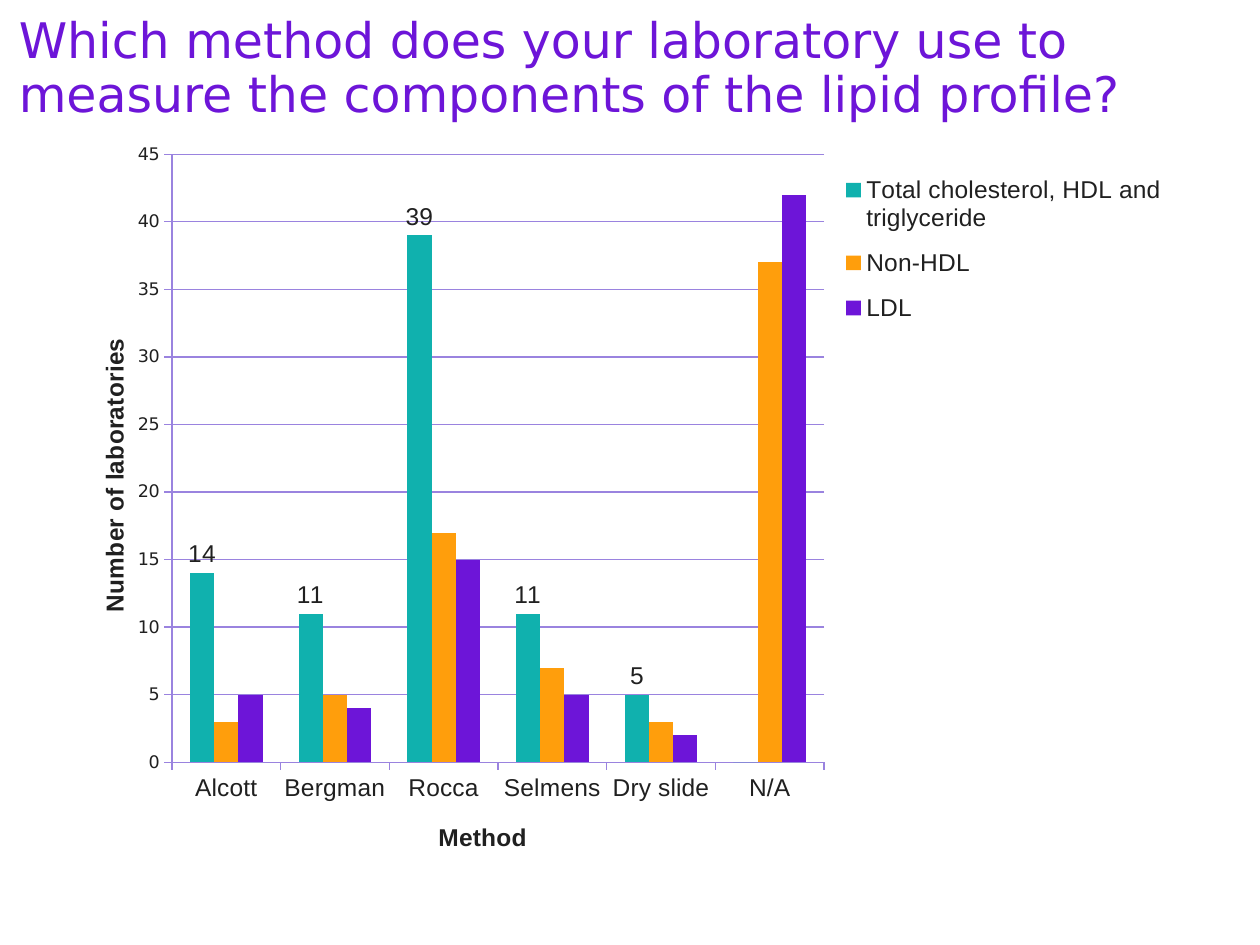
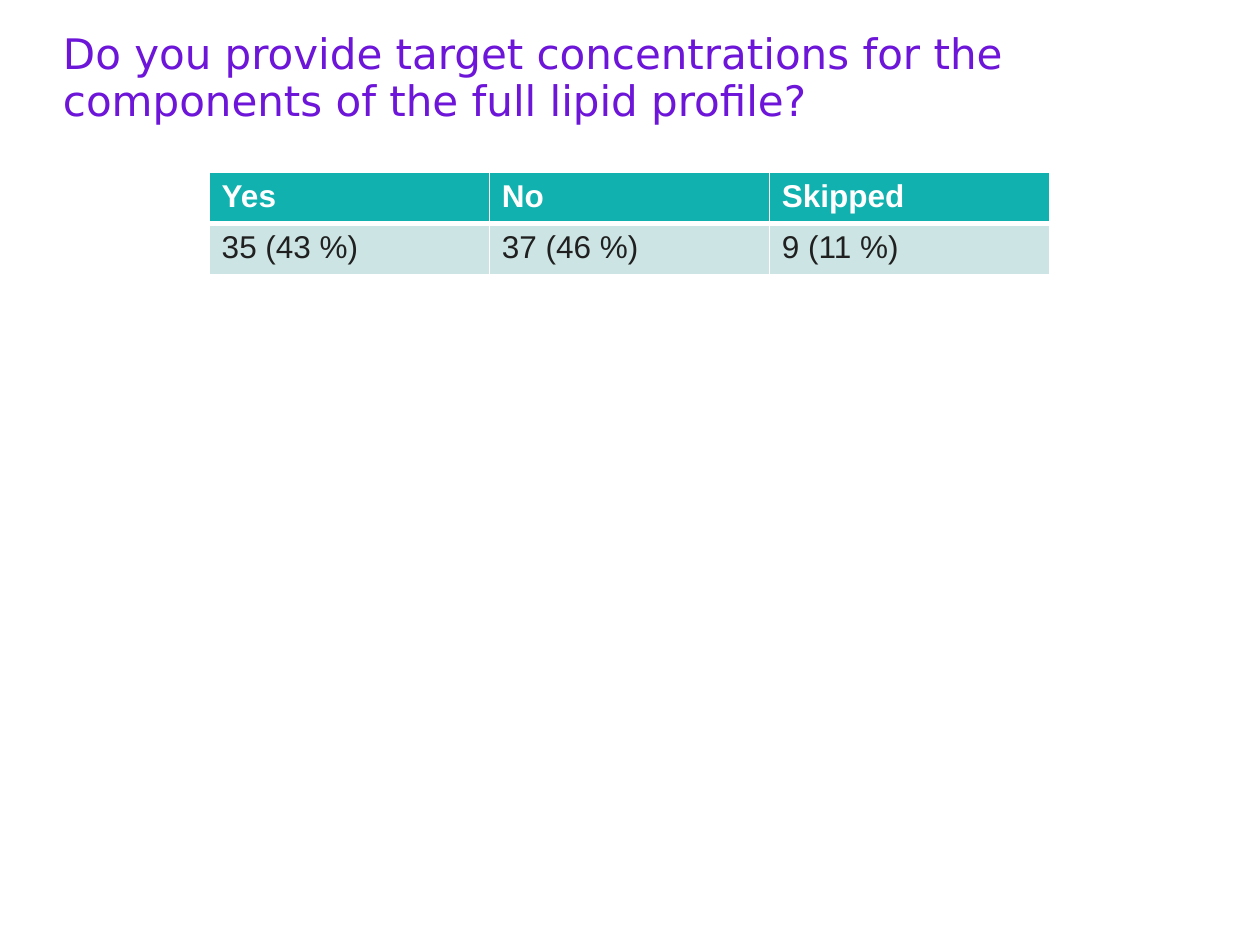
from dataclasses import dataclass
from typing import Any, NamedTuple, Optional

from lxml.etree import SubElement
from pptx import Presentation
from pptx.chart.data import CategoryChartData
from pptx.dml.color import RGBColor
from pptx.enum.chart import XL_CHART_TYPE as ChartType
from pptx.enum.chart import XL_LABEL_POSITION as LabelPosition
from pptx.enum.chart import XL_LEGEND_POSITION as LegendPosition
from pptx.enum.chart import XL_TICK_MARK as TickMark
from pptx.oxml import parse_xml
from pptx.oxml.ns import nsdecls, qn
from pptx.util import Inches, Pt


@dataclass(frozen=True)
class Theme:
    purple: str = "6D15D8"
    teal: str = "10B1AE"
    orange: str = "FF9E0C"
    pale_teal: str = "CCE4E3"
    lilac: str = "9A83DF"
    ink: str = "202020"
    white: str = "FFFFFF"
    title_font: str = "DejaVu Sans"
    body_font: str = "Arial"
    large_title: int = 28
    title: int = 24
    table: int = 18
    chart: int = 14
    scale: int = 10


class Series(NamedTuple):
    name: str
    values: tuple[int, ...]
    color: str


class Box(NamedTuple):
    left: float
    top: float
    width: float
    height: float

    def inches(self) -> list[int]:
        return [Inches(length) for length in self]


THEME = Theme()
METHODS = ("Alcott", "Bergman", "Rocca", "Selmens", "Dry slide", "N/A")
SERIES = (
    Series("Total cholesterol, HDL and triglyceride", (14, 11, 39, 11, 5, 0), THEME.teal),
    Series("Non-HDL", (3, 5, 17, 7, 3, 37), THEME.orange),
    Series("LDL", (5, 4, 15, 5, 2, 42), THEME.purple),
)
ANSWERS = (
    ("Yes", "No", "Skipped"),
    ("35 (43 %)", "37 (46 %)", "9 (11 %)"),
)


def style_font(font: Any, size: int, color: str, name: str = THEME.body_font,
               bold: bool = False) -> None:
    font.size = Pt(size)
    font.name = name
    font.bold = bold
    font.color.rgb = RGBColor.from_string(color)


def add_title(slide: Any, text: str, place: Box, size: int) -> None:
    frame = slide.shapes.add_textbox(*place.inches()).text_frame
    frame.word_wrap = True
    frame.margin_left = frame.margin_top = frame.margin_right = frame.margin_bottom = 0
    frame.text = text
    para = frame.paragraphs[0]
    para.line_spacing = 0.92
    style_font(para.runs[0].font, size, THEME.purple, THEME.title_font)


def set_layout(element: Any, index: int, x: float, y: float,
               size: Optional[tuple[float, float]] = None, inner: bool = False) -> None:
    """Place a chart part by fractions of the chart's width and height."""
    for old in element.findall(qn("c:layout")):
        element.remove(old)
    layout = parse_xml(f"<c:layout {nsdecls('c')}><c:manualLayout/></c:layout>")
    settings = [("layoutTarget", "inner")] if inner else []
    settings += [("xMode", "edge"), ("yMode", "edge"), ("x", x), ("y", y)]
    if size:
        settings += zip("wh", size)
    for name, value in settings:
        SubElement(layout[0], qn(f"c:{name}")).set("val", str(value))
    element.insert(index, layout)


def style_axis(axis: Any, title: str, x: float, y: float) -> None:
    axis.has_title = True
    frame = axis.axis_title.text_frame
    frame.text = title
    style_font(frame.paragraphs[0].runs[0].font, THEME.chart, THEME.ink, bold=True)
    set_layout(axis.axis_title._element, 1, x, y)
    axis.major_tick_mark = TickMark.OUTSIDE
    axis.minor_tick_mark = TickMark.NONE
    style_line(axis.format.line)


def style_line(line: Any) -> None:
    line.color.rgb = RGBColor.from_string(THEME.lilac)
    line.width = Pt(0.75)


def label_series(series: Any, hidden_point: int) -> None:
    labels = series.data_labels
    labels.show_value = True
    labels.position = LabelPosition.OUTSIDE_END
    labels.number_format = "0"
    labels.number_format_is_linked = False
    style_font(labels.font, THEME.chart, THEME.ink)
    labels._element.insert(0, parse_xml(
        f'<c:dLbl {nsdecls("c")}><c:idx val="{hidden_point}"/><c:delete val="1"/></c:dLbl>'))


def add_method_chart(slide: Any, place: Box) -> None:
    data = CategoryChartData(number_format="0")
    data.categories = METHODS
    for series in SERIES:
        data.add_series(series.name, series.values)
    chart = slide.shapes.add_chart(ChartType.COLUMN_CLUSTERED, *place.inches(), data).chart
    style_font(chart.font, THEME.scale, THEME.purple, THEME.title_font)
    chart.has_title = False

    plot = chart.plots[0]
    plot.gap_width = 150
    plot.overlap = 0
    plot.vary_by_categories = False
    for drawn, series in zip(plot.series, SERIES):
        drawn.format.fill.solid()
        drawn.format.fill.fore_color.rgb = RGBColor.from_string(series.color)
        drawn.invert_if_negative = False
    label_series(plot.series[0], hidden_point=METHODS.index("N/A"))
    plot_area = next(chart._chartSpace.iter(qn("c:plotArea")))
    set_layout(plot_area, 0, 0.081, 0.034, (0.595, 0.84), inner=True)

    methods, counts = chart.category_axis, chart.value_axis
    style_axis(methods, "Method", 0.32, 0.95)
    style_axis(counts, "Number of laboratories", 0.01, 0.285)
    style_font(methods.tick_labels.font, THEME.chart, THEME.ink)
    style_font(counts.tick_labels.font, THEME.scale, THEME.ink, THEME.title_font)
    counts.tick_labels.number_format = "0"
    counts.tick_labels.number_format_is_linked = False
    counts.minimum_scale, counts.maximum_scale, counts.major_unit = 0, 45, 5
    counts.has_major_gridlines = True
    style_line(counts.major_gridlines.format.line)

    chart.has_legend = True
    legend = chart.legend
    legend.position = LegendPosition.RIGHT
    legend.include_in_layout = False
    style_font(legend.font, THEME.chart, THEME.ink)
    set_layout(legend._element, 1, 0.685, 0.04, (0.31, 0.25))


def set_borders(cell: Any, top: int, bottom: int) -> None:
    """Draw white cell borders; the side ones are 1 point wide."""
    properties = cell._tc.get_or_add_tcPr()
    for index, (side, width) in enumerate(
            (("lnL", 1), ("lnR", 1), ("lnT", top), ("lnB", bottom))):
        properties.insert(index, parse_xml(
            f'<a:{side} {nsdecls("a")} w="{Pt(width)}"><a:solidFill>'
            f'<a:srgbClr val="{THEME.white}"/></a:solidFill></a:{side}>'))


def add_answer_table(slide: Any, place: Box) -> None:
    table = slide.shapes.add_table(len(ANSWERS), len(ANSWERS[0]), *place.inches()).table
    table.horz_banding = False
    for row, answers in enumerate(ANSWERS):
        header = row == 0
        for column, answer in enumerate(answers):
            cell = table.cell(row, column)
            cell.text = answer
            cell.fill.solid()
            cell.fill.fore_color.rgb = RGBColor.from_string(
                THEME.teal if header else THEME.pale_teal)
            style_font(cell.text_frame.paragraphs[0].runs[0].font, THEME.table,
                       THEME.white if header else THEME.ink, bold=header)
            set_borders(cell, top=1 if header else 3, bottom=3 if header else 1)


def main() -> None:
    deck = Presentation()
    deck.slide_width, deck.slide_height = Inches(10), Inches(7.5)
    blank = deck.slide_layouts[6]

    page = deck.slides.add_slide(blank)
    add_title(page, "Which method does your laboratory use to measure the components "
                    "of the lipid profile?", Box(0.15, 0.12, 9.73, 0.74), THEME.large_title)
    add_method_chart(page, Box(0.66, 1.03, 8.7, 5.79))

    page = deck.slides.add_slide(blank)
    add_title(page, "Do you provide target concentrations for the components "
                    "of the full lipid profile?", Box(0.5, 0.26, 9, 0.74), THEME.title)
    add_answer_table(page, Box(1.66, 1.37, 6.67, 0.81))

    deck.save("out.pptx")


if __name__ == "__main__":
    main()
